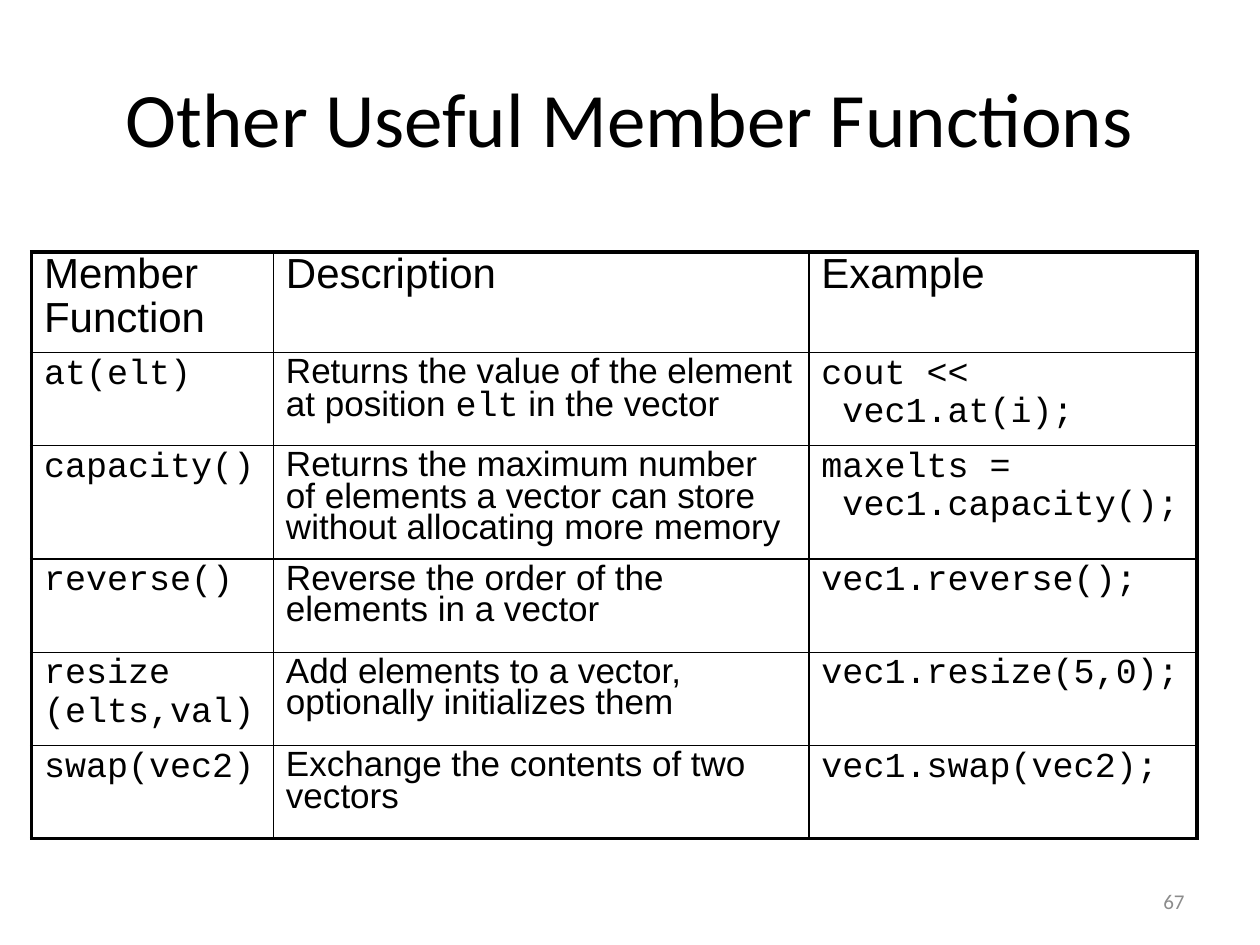
from lxml import etree
from pptx import Presentation
from pptx import util as u
from pptx.dml.color import RGBColor
from pptx.enum import text
from pptx.oxml.ns import qn

BLACK, WHITE, GRAY = "000000", "FFFFFF", "8C8C8C"
SANS, CODE, HEADING = "Arial", "Courier New", "Calibri"
THIN, THICK = 1, 2.25

HEADER = ("Member\nFunction", "Description", "Example")
# The middle entry lists its spans; every second span is code.
FUNCTIONS = [
    ("at(elt)",
     ["Returns the value of the element at position ", "elt", " in the vector"],
     "cout <<\n vec1.at(i);"),
    ("capacity()",
     ["Returns the maximum number of elements a vector can store "
      "without allocating more memory"],
     "maxelts =\n vec1.capacity();"),
    ("reverse()",
     ["Reverse the order of the elements in a vector"],
     "vec1.reverse();"),
    ("resize\n(elts,val)",
     ["Add elements to a vector, optionally initializes them"],
     "vec1.resize(5,0);"),
    ("swap(vec2)",
     ["Exchange the contents of two vectors"],
     "vec1.swap(vec2);"),
]


def color(value):
    return RGBColor.from_string(value)


def write(frame, spans, size, fonts, fill=BLACK, align=text.PP_ALIGN.LEFT,
          spacing=None, gap=0):
    """Write spans in alternating fonts; a newline starts a new paragraph."""
    frame.word_wrap = True
    para = frame.paragraphs[0]
    paras = [para]
    for index, words in enumerate(spans):
        for number, line in enumerate(words.split("\n")):
            if number:
                para = frame.add_paragraph()
                para.space_before = u.Pt(gap)
                paras.append(para)
            span = para.add_run()
            span.text = line
            span.font.size = u.Pt(size)
            span.font.name = fonts[index % len(fonts)]
            span.font.color.rgb = color(fill)
    for para in paras:
        para.alignment = align
        if spacing:
            para.line_spacing = spacing


def add_label(page, box, words, size, fill, align):
    frame = page.shapes.add_textbox(*map(u.Inches, box)).text_frame
    frame.vertical_anchor = text.MSO_ANCHOR.MIDDLE
    write(frame, [words], size, [HEADING], fill=fill, align=align)


def set_borders(cell, widths):
    """Draw the left, right, top and bottom borders in the given points."""
    props = cell._tc.get_or_add_tcPr()
    for side, width in zip("LRTB", widths):
        line = etree.SubElement(props, qn(f"a:ln{side}"), w=str(u.Pt(width)))
        solid = etree.SubElement(line, qn("a:solidFill"))
        etree.SubElement(solid, qn("a:srgbClr"), val=BLACK)


def add_function_table(page, box, column_widths):
    row_count, column_count = len(FUNCTIONS) + 1, len(HEADER)
    table = page.shapes.add_table(row_count, column_count,
                                  *map(u.Inches, box)).table
    table.first_row = table.horz_banding = False
    for column, width in zip(table.columns, column_widths):
        column.width = u.Inches(width)
    for r, entries in enumerate([HEADER] + FUNCTIONS):
        for c, entry in enumerate(entries):
            cell = table.cell(r, c)
            edges = (c == 0, c == column_count - 1, r == 0, r == row_count - 1)
            set_borders(cell, [THICK if edge else THIN for edge in edges])
            cell.fill.solid()
            cell.fill.fore_color.rgb = color(WHITE)
            spans = entry if isinstance(entry, list) else [entry]
            fonts = [SANS, CODE] if r == 0 or c == 1 else [CODE]
            write(cell.text_frame, spans, 20 if r else 24, fonts,
                  spacing=0.8, gap=4)


def main():
    deck = Presentation()
    deck.slide_width, deck.slide_height = u.Inches(10), u.Inches(7.5)
    page = deck.slides.add_slide(deck.slide_layouts[6])
    add_label(page, (0.5, 0.3, 9, 1.25), "Other Useful Member Functions",
              44, BLACK, text.PP_ALIGN.CENTER)
    add_function_table(page, (0.25, 2, 9.25, 4.44), (1.92, 4.25, 3.08))
    add_label(page, (7.17, 6.95, 2.33, 0.4), "67",
              12, GRAY, text.PP_ALIGN.RIGHT)
    deck.save("out.pptx")


if __name__ == "__main__":
    main()
